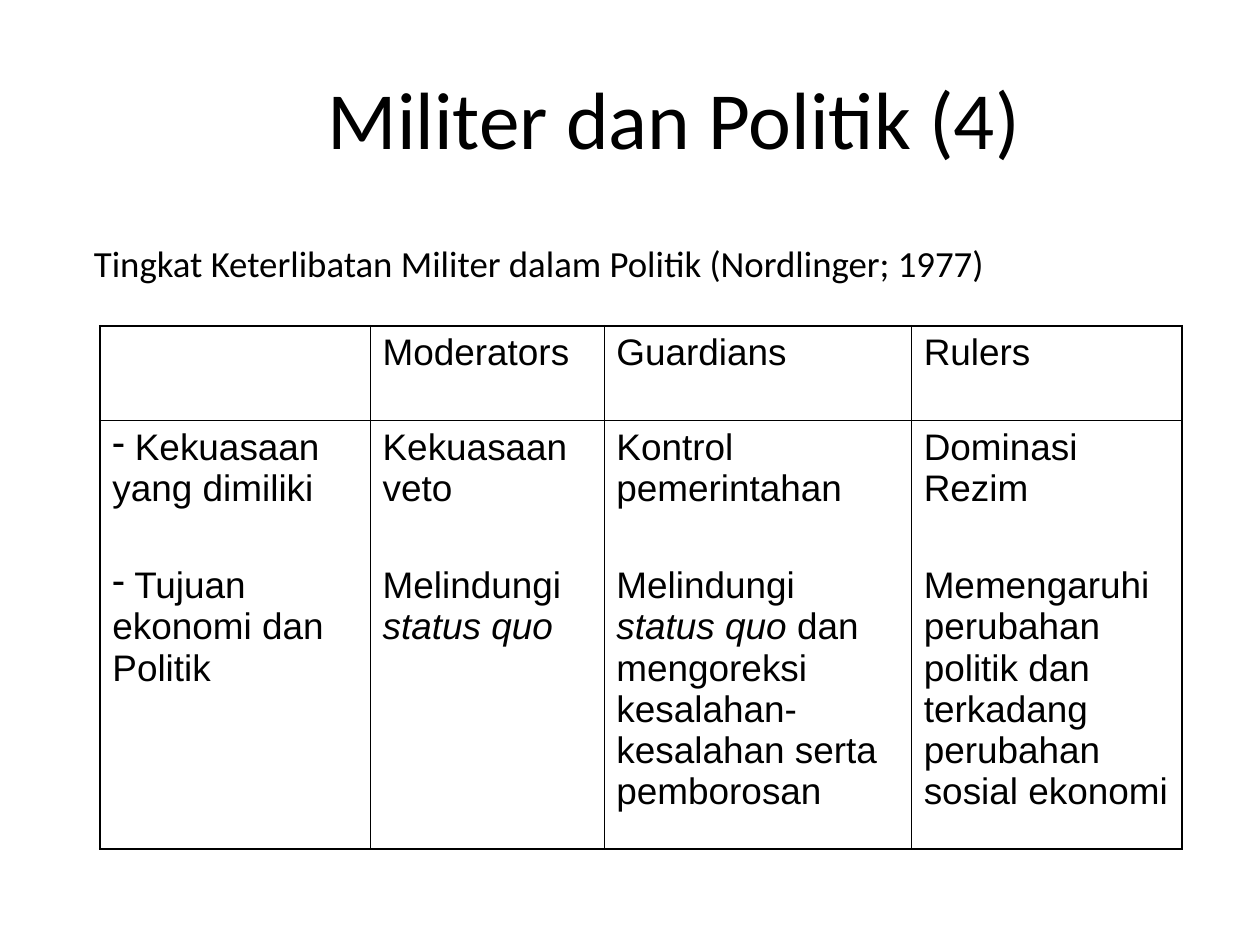
"""Build the slide on levels of military involvement in politics."""
from lxml.etree import SubElement
from pptx import Presentation
from pptx.dml.color import RGBColor
from pptx.enum.text import MSO_ANCHOR, MSO_AUTO_SIZE, PP_ALIGN
from pptx.oxml.ns import qn
from pptx.util import Pt

COLORS = {"ink": "000000", "paper": "FFFFFF"}
TITLE_FONT = {"name": "Calibri", "size": Pt(66), "bold": False}
SUBTITLE_FONT = {"name": "Calibri", "size": Pt(29.9)}
TABLE_FONT = {"name": "Arial", "size": Pt(30), "bold": False}
FRAME_FORMAT = {
    "word_wrap": True,
    "auto_size": MSO_AUTO_SIZE.NONE,
    "margin_left": Pt(4.3),
    "margin_right": Pt(4.3),
    "margin_top": Pt(4.3),
    "margin_bottom": Pt(4.3),
}
CELL_FORMAT = {
    "margin_left": Pt(10),
    "margin_right": Pt(10),
    "margin_top": Pt(5),
    "margin_bottom": Pt(5),
    "vertical_anchor": MSO_ANCHOR.TOP,
}
COLUMN_WIDTHS = [219.6, 190, 249.8, 219.7]
ROW_HEIGHTS = [77, 347.8]
TOPIC_GAP = 45.5
OUTER_LINE, INNER_LINE = 2.25, 1
LEVELS = ["Moderators", "Guardians", "Rulers"]
POWERS = ["Kekuasaan veto", "Kontrol pemerintahan", "Dominasi Rezim"]
GOALS = [
    [("Melindungi ", False), ("status quo", True)],
    [
        ("Melindungi ", False),
        ("status quo ", True),
        ("dan mengoreksi kesalahan-kesalahan serta pemborosan", False),
    ],
    [("Memengaruhi perubahan politik dan terkadang perubahan sosial ekonomi", False)],
]
TOPICS = [[(" Kekuasaan yang dimiliki", False)], [(" Tujuan ekonomi dan Politik", False)]]


def apply_format(target, values):
    """Set each named attribute on the target."""
    for key, value in values.items():
        setattr(target, key, value)


def style_font(font, values):
    """Give a font its format and the ink colour."""
    apply_format(font, values)
    font.color.rgb = RGBColor.from_string(COLORS["ink"])


def fill_frame(frame, wording, font, align, anchor):
    """Write one formatted paragraph into a text frame."""
    apply_format(frame, FRAME_FORMAT)
    frame.vertical_anchor = anchor
    frame.text = wording
    paragraph = frame.paragraphs[0]
    paragraph.alignment = align
    style_font(paragraph.runs[0].font, font)


def add_title(slide, wording):
    """Place and fill the title placeholder."""
    title = slide.shapes.title
    title.left, title.top, title.width, title.height = Pt(87), Pt(31), Pt(921.6), Pt(128)
    fill_frame(title.text_frame, wording, TITLE_FONT, PP_ALIGN.CENTER, MSO_ANCHOR.MIDDLE)


def add_subtitle(slide, wording):
    """Add the line that introduces the table."""
    subtitle = slide.shapes.add_textbox(Pt(72), Pt(191.5), Pt(918), Pt(46))
    fill_frame(subtitle.text_frame, wording, SUBTITLE_FONT, PP_ALIGN.LEFT, MSO_ANCHOR.TOP)


def add_dash(paragraph):
    """Give a paragraph a dash bullet without indent."""
    properties = paragraph._p.get_or_add_pPr()
    properties.set("marL", "0")
    properties.set("indent", "0")
    SubElement(properties, qn("a:buFontTx"))
    SubElement(properties, qn("a:buChar")).set("char", "-")


def write_cell(cell, topics, dashed):
    """Write the topics of a cell, one paragraph each."""
    frame = cell.text_frame
    frame.word_wrap = True
    for index, topic in enumerate(topics):
        paragraph = frame.add_paragraph() if index else frame.paragraphs[0]
        paragraph.alignment = PP_ALIGN.LEFT
        if index:
            paragraph.space_before = Pt(TOPIC_GAP)
        if dashed:
            add_dash(paragraph)
        for wording, italic in topic:
            run = paragraph.add_run()
            run.text = wording
            style_font(run.font, {**TABLE_FONT, "italic": italic})


def draw_borders(cell, outer_sides):
    """Draw the four cell borders, heavier on the outer sides."""
    properties = cell._tc.get_or_add_tcPr()
    for side in "LRTB":
        width = OUTER_LINE if side in outer_sides else INNER_LINE
        border = SubElement(properties, qn(f"a:ln{side}"))
        border.set("w", str(Pt(width)))
        ink = SubElement(border, qn("a:solidFill"))
        SubElement(ink, qn("a:srgbClr")).set("val", COLORS["ink"])


def add_levels_table(slide, rows):
    """Add the table that compares the levels of involvement."""
    table = slide.shapes.add_table(
        len(ROW_HEIGHTS), len(COLUMN_WIDTHS), Pt(81.4), Pt(265),
        Pt(sum(COLUMN_WIDTHS)), Pt(sum(ROW_HEIGHTS)),
    ).table
    apply_format(table, {"first_row": False, "horz_banding": False})
    for column, width in zip(table.columns, COLUMN_WIDTHS):
        column.width = Pt(width)
    for row, height in zip(table.rows, ROW_HEIGHTS):
        row.height = Pt(height)
    for r, row in enumerate(rows):
        for c, topics in enumerate(row):
            cell = table.cell(r, c)
            apply_format(cell, CELL_FORMAT)
            write_cell(cell, topics, dashed=c == 0)
            edges = {"L": c == 0, "R": c == len(row) - 1, "T": r == 0, "B": r == len(rows) - 1}
            draw_borders(cell, [side for side, outer in edges.items() if outer])
            cell.fill.background()


def main():
    """Build and save the slide."""
    presentation = Presentation()
    presentation.slide_width, presentation.slide_height = Pt(1024), Pt(768)
    slide = presentation.slides.add_slide(presentation.slide_layouts[5])
    slide.background.fill.solid()
    slide.background.fill.fore_color.rgb = RGBColor.from_string(COLORS["paper"])
    add_title(slide, "Militer dan Politik (4)")
    add_subtitle(slide, "Tingkat Keterlibatan Militer dalam Politik (Nordlinger; 1977)")
    header = [[]] + [[[(level, False)]] for level in LEVELS]
    body = [TOPICS] + [[[(power, False)], goal] for power, goal in zip(POWERS, GOALS)]
    add_levels_table(slide, [header, body])
    presentation.save("out.pptx")


if __name__ == "__main__":
    main()
